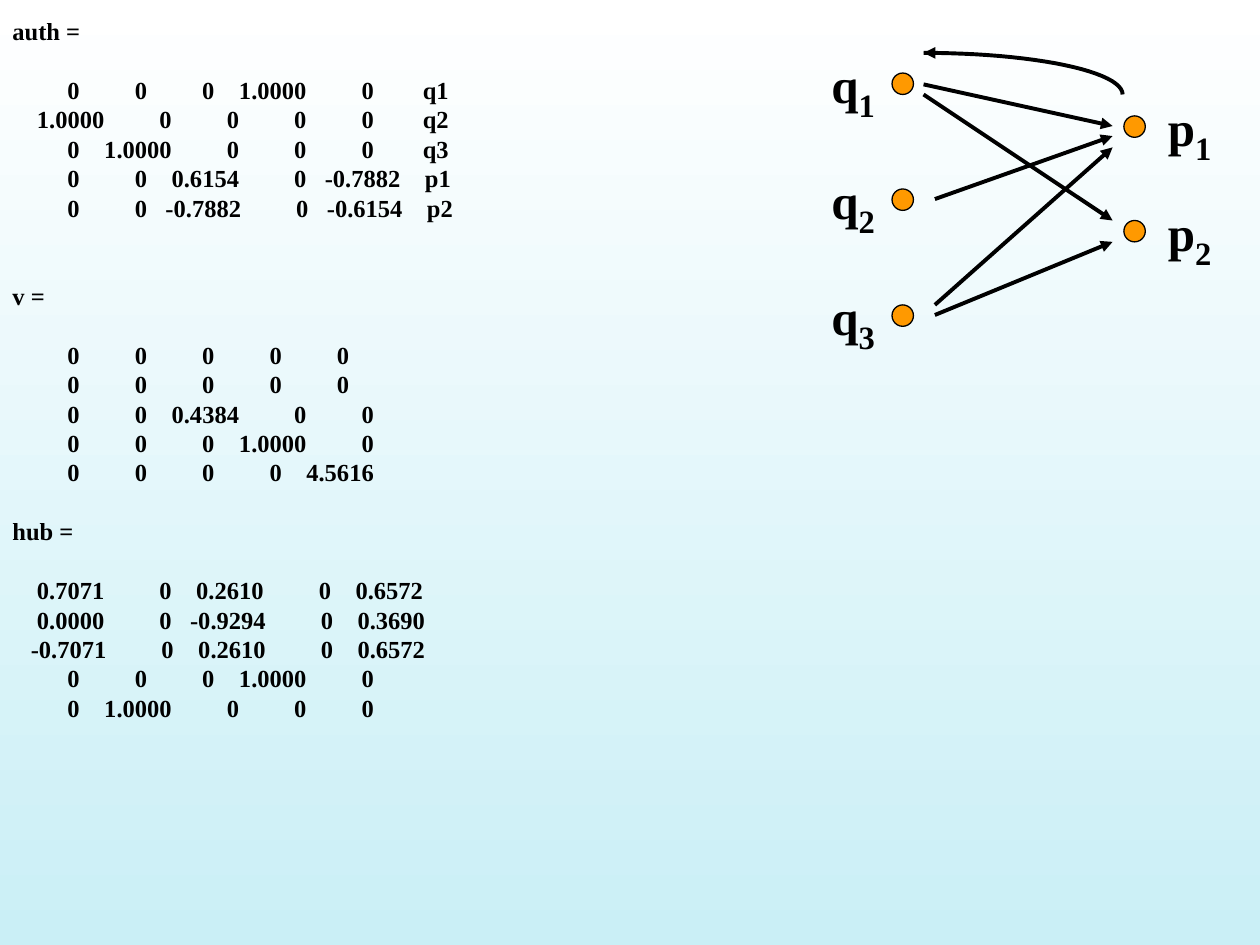
"""Build the slide with hub and authority matrices beside their link graph."""
from math import cos, pi, sin

from lxml.etree import SubElement
from pptx import Presentation
from pptx.dml.color import RGBColor
from pptx.enum.shapes import MSO_CONNECTOR as Connector, MSO_SHAPE as Shape
from pptx.oxml.ns import qn
from pptx.util import Inches, Pt

BLACK = RGBColor(0x00, 0x00, 0x00)
WHITE = RGBColor(0xFF, 0xFF, 0xFF)
ORANGE = RGBColor(0xFF, 0x99, 0x00)
PALE_BLUE = RGBColor(0xCA, 0xEF, 0xF6)
FONT = "Times New Roman"
LINE_HEIGHT = 16.8


def style_font(font, size):
    font.name = FONT
    font.size = Pt(size)
    font.bold = True
    font.color.rgb = BLACK


deck = Presentation()
deck.slide_width, deck.slide_height = Inches(10), Inches(7.5)
page = deck.slides.add_slide(deck.slide_layouts[6])

backdrop = page.background.fill
backdrop.gradient()
backdrop.gradient_angle = 270
for stop, color in zip(backdrop.gradient_stops, (WHITE, PALE_BLUE)):
    stop.color.rgb = color

nodes = [
    ("q", "1", 7.08, 0.58, 6.5),
    ("q", "2", 7.08, 1.5, 6.5),
    ("q", "3", 7.08, 2.42, 6.5),
    ("p", "1", 8.92, 0.92, 9.17),
    ("p", "2", 8.92, 1.75, 9.17),
]
for letter, index, left, top, label_left in nodes:
    dot = page.shapes.add_shape(
        Shape.FLOWCHART_CONNECTOR, Inches(left), Inches(top), Inches(0.17), Inches(0.17))
    dot.shadow.inherit = False
    dot.fill.solid()
    dot.fill.fore_color.rgb = ORANGE
    dot.line.color.rgb = BLACK
    dot.line.width = Pt(0.75)

    label = page.shapes.add_textbox(
        Inches(label_left), Inches(top - 0.25), Inches(0.56), Inches(0.57))
    label.text_frame.word_wrap = False
    para = label.text_frame.paragraphs[0]
    for text, size in ((letter, 28), (index, 32)):
        span = para.add_run()
        span.text = text
        style_font(span.font, size)
    span.font._element.set("baseline", "-25000")

arrows = [
    (7.33, 0.67, 8.83, 1),
    (7.42, 1.58, 8.83, 1.08),
    (7.42, 2.42, 8.83, 1.17),
    (7.33, 0.75, 8.83, 1.75),
    (7.42, 2.5, 8.83, 1.92),
    (7.5, 0.42, 7.33, 0.42),
]
for ends in arrows:
    arrow = page.shapes.add_connector(Connector.STRAIGHT, *map(Inches, ends))
    arrow.line.color.rgb = BLACK
    arrow.line.width = Pt(2.25)
    SubElement(arrow.line._get_or_add_ln(), qn("a:tailEnd"), type="triangle")
    SubElement(arrow._element.spPr, qn("a:effectLst"))

steps = 24
angles = [pi / 2 * step / steps for step in range(steps + 1)]
arc_points = [
    (Inches(7.33 + 1.58 * sin(angle)), Inches(0.75 - 0.33 * cos(angle)))
    for angle in angles
]
builder = page.shapes.build_freeform(*arc_points[0])
builder.add_line_segments(arc_points[1:], close=False)
back_link = builder.convert_to_shape()
back_link.shadow.inherit = False
back_link.fill.background()
back_link.line.color.rgb = BLACK
back_link.line.width = Pt(2.25)

matrices = [
    ("auth =", 0, [
        "         0         0         0    1.0000         0        q1",
        "    1.0000         0         0         0         0        q2",
        "         0    1.0000         0         0         0        q3",
        "         0         0    0.6154         0   -0.7882    p1",
        "         0         0   -0.7882         0   -0.6154    p2",
    ]),
    ("v =", 2, [
        "         0         0         0         0         0",
        "         0         0         0         0         0",
        "         0         0    0.4384         0         0",
        "         0         0         0    1.0000         0",
        "         0         0         0         0    4.5616",
    ]),
    ("hub =", 1, [
        "    0.7071         0    0.2610         0    0.6572",
        "    0.0000         0   -0.9294         0    0.3690",
        "   -0.7071         0    0.2610         0    0.6572",
        "         0         0         0    1.0000         0",
        "         0    1.0000         0         0         0",
    ]),
]
lines = []
for heading, gap, rows in matrices:
    lines += [(heading, gap), (rows[0], 1)] + [(row, 0) for row in rows[1:]]

output = page.shapes.add_textbox(Inches(0), Inches(0.08), Inches(4.08), Inches(5.76))
frame = output.text_frame
frame.word_wrap = True
frame.text = "\n".join(text for text, gap in lines)
for para, (text, gap) in zip(frame.paragraphs, lines):
    para.line_spacing = Pt(LINE_HEIGHT)
    if gap:
        para.space_before = Pt(gap * LINE_HEIGHT)
    style_font(para.runs[0].font, 14)

deck.save("out.pptx")
